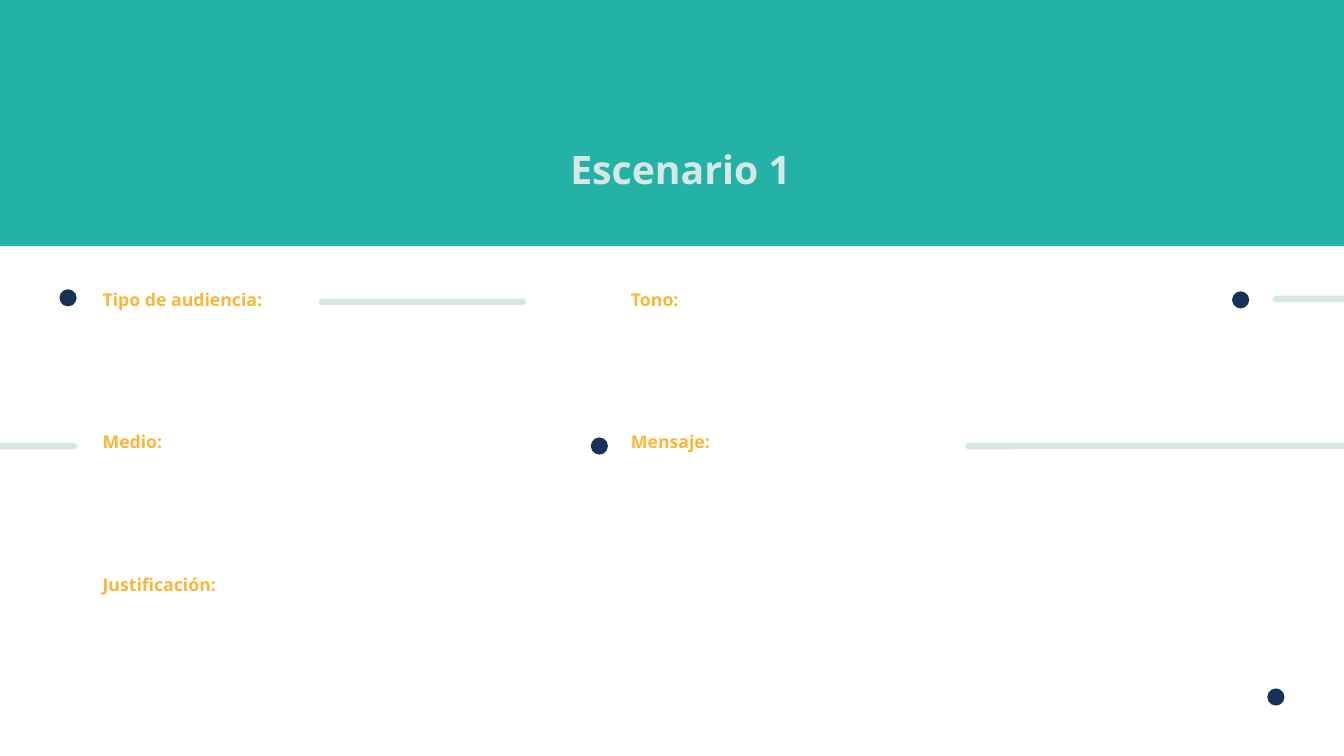
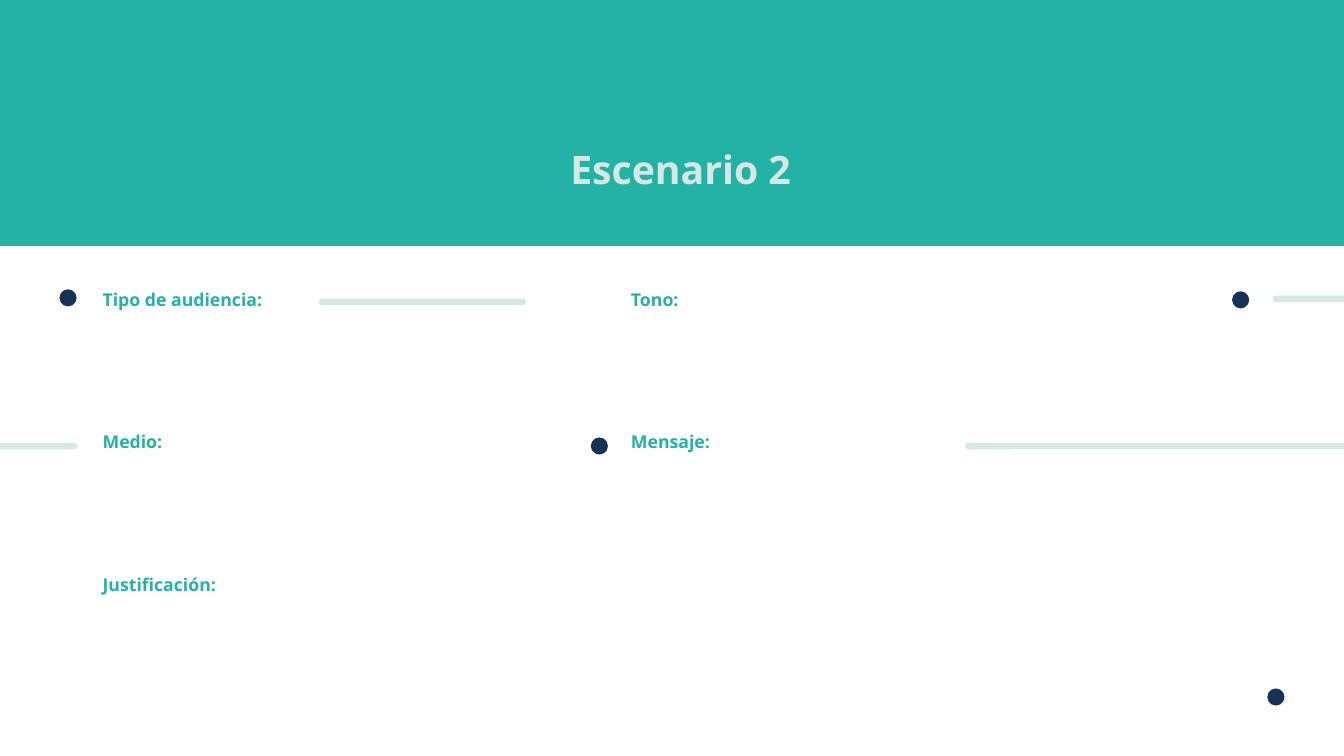
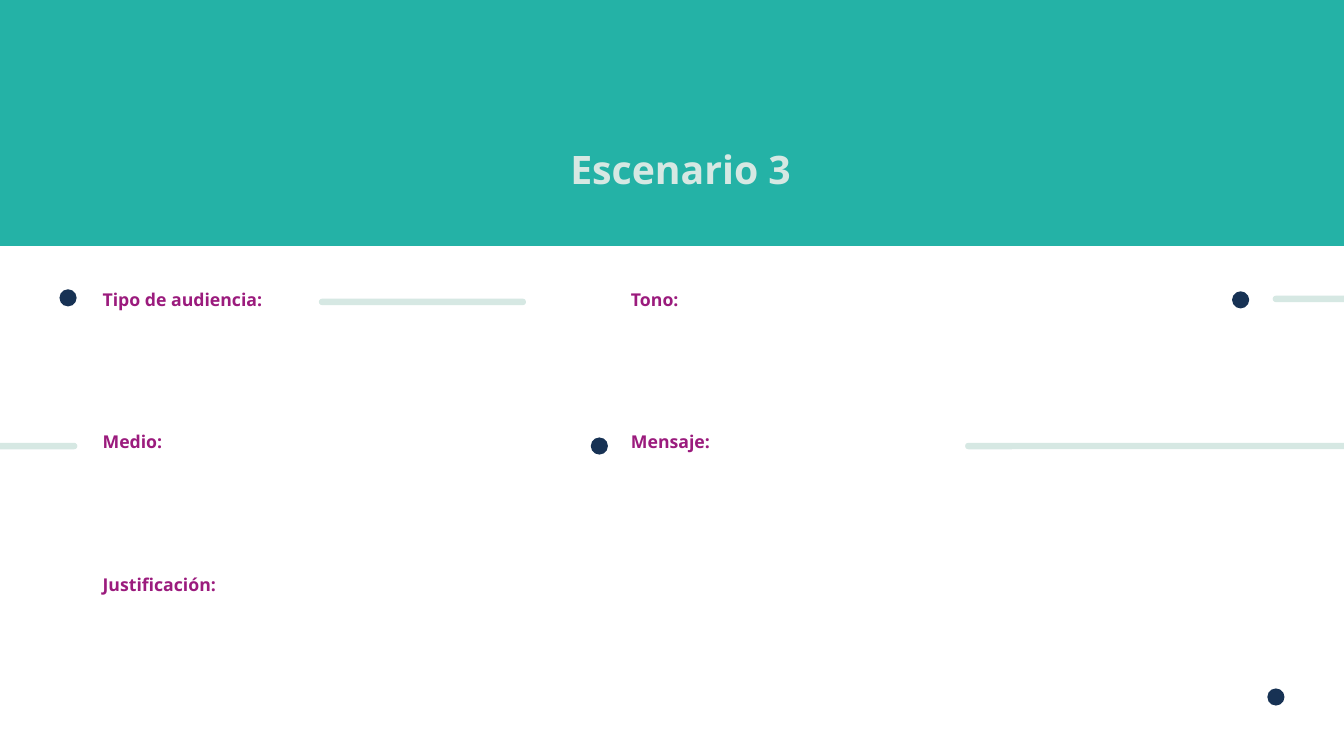
"""Builds three scenario slides with a title band, field labels, dots and bars."""
from pptx import Presentation
from pptx.dml.color import RGBColor
from pptx.enum.shapes import MSO_SHAPE
from pptx.enum.text import MSO_ANCHOR, PP_ALIGN
from pptx.util import Pt

RECT, OVAL, ROUND = MSO_SHAPE.RECTANGLE, MSO_SHAPE.OVAL, MSO_SHAPE.ROUNDED_RECTANGLE
TOP, BOTTOM = MSO_ANCHOR.TOP, MSO_ANCHOR.BOTTOM
LEFT, CENTER = PP_ALIGN.LEFT, PP_ALIGN.CENTER
PX = 9144
FONT = "Open Sans"
TEAL, MINT, NAVY, AMBER, PURPLE = "24B2A6", "D6E8E3", "173254", "FAB638", "9B1B7D"
DOT, BAR = 17, 5

SCENARIOS = [("Escenario 1", AMBER), ("Escenario 2", TEAL), ("Escenario 3", PURPLE)]
COLUMNS = [(92, 430), (616, 641)]
ROWS = [287, 428, 570]
FIELDS = [["Tipo de audiencia:", "Tono:"], ["Medio:", "Mensaje:"], ["Justificación:"]]
DOTS = [(59, 287), (586, 434), (1222, 289), (1257, 683)]
BARS = [(317, 297, 204), (-3, 440, 79), (958, 440, 383), (1263, 294, 79)]


def add_block(s, kind, x, y, w, h, color):
    sp = s.shapes.add_shape(kind, x * PX, y * PX, w * PX, h * PX)
    sp.shadow.inherit = False
    sp.fill.solid()
    sp.fill.fore_color.rgb = RGBColor.from_string(color)
    sp.line.fill.background()
    return sp


def add_text(s, text, x, y, w, h, size, color, align=LEFT, anchor=TOP, spacing=1.0):
    tf = s.shapes.add_textbox(x * PX, y * PX, w * PX, h * PX).text_frame
    tf.word_wrap = True
    tf.vertical_anchor = anchor
    tf.margin_bottom = 0
    p = tf.paragraphs[0]
    p.text = text
    p.alignment = align
    p.line_spacing = spacing
    p.font.name = FONT
    p.font.size = Pt(size)
    p.font.bold = True
    p.font.color.rgb = RGBColor.from_string(color)


prs = Presentation()
prs.slide_width, prs.slide_height = 1333 * PX, 750 * PX

for title, accent in SCENARIOS:
    s = prs.slides.add_slide(prs.slide_layouts[6])
    add_block(s, RECT, 0, -3, 1333, 247, TEAL)
    add_text(s, title, 92, 106, 1166, 85, 28, MINT, CENTER, BOTTOM)
    for y, labels in zip(ROWS, FIELDS):
        for (x, w), label in zip(COLUMNS, labels):
            add_text(s, label, x, y, w, 27, 12.6, accent, spacing=0.7)
    for x, y in DOTS:
        add_block(s, OVAL, x, y, DOT, DOT, NAVY)
    for x, y, w in BARS:
        sp = add_block(s, ROUND, x, y, w, BAR, MINT)
        sp.adjustments[0] = 0.5
        sp.line.color.rgb = RGBColor.from_string(MINT)
        sp.line.width = Pt(1)

prs.save("out.pptx")
